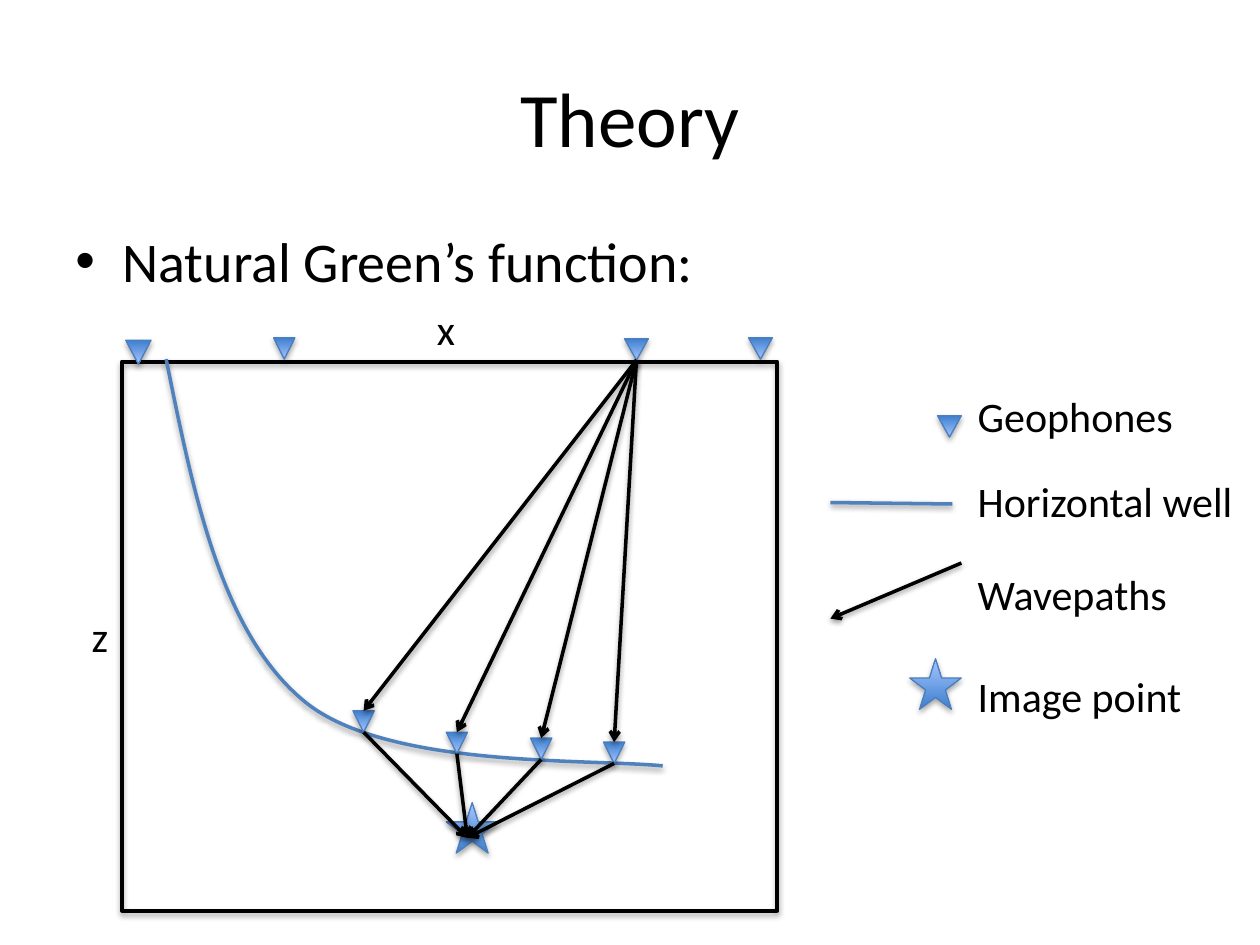
from lxml import etree
from pptx import Presentation
from pptx.dml.color import RGBColor
from pptx.enum.shapes import MSO_CONNECTOR, MSO_SHAPE
from pptx.enum.text import MSO_ANCHOR, MSO_AUTO_SIZE, PP_ALIGN
from pptx.oxml.ns import qn
from pptx.util import Cm, Pt

LINE = MSO_CONNECTOR.STRAIGHT
RECT, STAR = MSO_SHAPE.RECTANGLE, MSO_SHAPE.STAR_5_POINT
CONE = MSO_SHAPE.ISOSCELES_TRIANGLE
FIT, MIDDLE, CENTER = MSO_AUTO_SIZE.SHAPE_TO_FIT_TEXT, MSO_ANCHOR.MIDDLE, PP_ALIGN.CENTER
COLORS = {"ink": "000000", "well": "4F81BD", "edge": "4B7EBC",
          "deep": "3F80CE", "pale": "A4C4FF"}

# All places are in centimetres.
TITLE = ("Theory", (1.27, 0.76, 22.86, 3.18))
POINT = ("Natural Green’s function:", (1.27, 4.45, 22.86, 12.57))
FRAME = (2.46, 7.29, 13.21, 11.07)
LABELS = [  # text, left, top, width
    ("x", 8.56, 5.99, 0.89), ("z", 1.6, 12.19, 0.84),
    ("Geophones", 19.46, 7.75, 4.5), ("Horizontal well", 19.46, 9.47, 5.74),
    ("Wavepaths", 19.46, 11.33, 4.42), ("Image point", 19.46, 13.39, 4.67),
]
STARS = [(9.0, 16.18), (18.34, 13.28)]
SURFACE = [  # middle, top, width, height
    (15.33, 6.81, 0.48, 0.43), (12.83, 6.83, 0.48, 0.43),
    (5.73, 6.81, 0.43, 0.43), (2.79, 6.86, 0.51, 0.48),
]
KEY = (19.14, 8.38, 0.48, 0.43)
SIDE = 0.43
BURIED = [(7.33, 14.33), (9.21, 14.76), (10.91, 14.88), (12.38, 14.96)]
SOURCE, TARGET = (12.83, 7.26), (9.42, 16.89)
# Start, then two control points and an end for each cubic curve
WELL = [(3.35, 7.24), (3.91, 10.01), (4.47, 12.78), (6.15, 14.15),
        (7.8, 15.49), (11.81, 15.29), (13.36, 15.44)]
WELL_KEY = ((16.74, 10.13), (19.2, 10.16))
PATH_KEY = ((19.38, 11.35), (16.74, 12.47))


def rgb(name):
    return RGBColor.from_string(COLORS[name])


def shade(shape, alpha, dist):
    """Give the shape a soft shadow that falls straight down."""
    props = shape._element.spPr
    for old in props.findall(qn("a:effectLst")):
        props.remove(old)
    effects = etree.SubElement(props, qn("a:effectLst"))
    shadow = etree.SubElement(effects, qn("a:outerShdw"), blurRad="40000",
                              dist=str(dist), dir="5400000", rotWithShape="0")
    color = etree.SubElement(shadow, qn("a:srgbClr"), val=COLORS["ink"])
    etree.SubElement(color, qn("a:alpha"), val=str(alpha * 1000))


def stroke(shape, color, width):
    shape.line.color.rgb = rgb(color)
    shape.line.width = Pt(width)


def write(shape, text, size, **form):
    frame = shape.text_frame
    frame.text = text
    for name, value in form.items():
        setattr(frame, name, value)
    para = frame.paragraphs[0]
    font = para.runs[0].font
    for name, value in {"name": "Calibri", "size": Pt(size)}.items():
        setattr(font, name, value)
    font.color.rgb = rgb("ink")
    return para


def add_mark(shapes, kind, box, turn=0):
    mark = shapes.add_shape(kind, *map(Cm, box))
    mark.rotation = turn
    mark.fill.gradient()
    mark.fill.gradient_angle = 90
    for stop, name in zip(mark.fill.gradient_stops, ("deep", "pale")):
        stop.color.rgb = rgb(name)
    stroke(mark, "edge", 0.75)
    shade(mark, 35, 23000)


def add_phone(shapes, mid, top, width, height):
    add_mark(shapes, CONE, (mid - width / 2, top, width, height), 180)


def add_line(shapes, start, end, color="ink", head=True):
    line = shapes.add_connector(LINE, *map(Cm, start + end))
    stroke(line, color, 2)
    if head:
        etree.SubElement(line.line._get_or_add_ln(), qn("a:tailEnd"), type="arrow")
    shade(line, 38, 20000)


def add_curve(shapes, points):
    """Draw an open outline and turn each three segments into one cubic."""
    spots = [(Cm(x), Cm(y)) for x, y in points]
    pen = shapes.build_freeform(*spots[0])
    pen.add_line_segments(spots[1:], close=False)
    curve = pen.convert_to_shape()
    steps = list(curve._element.iter(qn("a:lnTo")))
    for i in range(0, len(steps), 3):
        cubic = etree.Element(qn("a:cubicBezTo"))
        steps[i].addprevious(cubic)
        for step in steps[i:i + 3]:
            cubic.append(step[0])
            step.getparent().remove(step)
    curve.fill.background()
    stroke(curve, "well", 2)
    shade(curve, 38, 20000)


def main():
    deck = Presentation()
    deck.slide_width, deck.slide_height = Cm(25.4), Cm(19.05)
    slide = deck.slides.add_slide(deck.slide_layouts[5])
    shapes = slide.shapes

    text, box = TITLE
    title = shapes.title
    for name, value in zip(("left", "top", "width", "height"), box):
        setattr(title, name, Cm(value))
    write(title, text, 44, vertical_anchor=MIDDLE).alignment = CENTER

    text, box = POINT
    para = write(shapes.add_textbox(*map(Cm, box)), text, 32, word_wrap=True)
    para.space_before = Pt(6.4)
    props = para._p.get_or_add_pPr()
    props.set("marL", str(Cm(0.95)))
    props.set("indent", str(Cm(-0.95)))
    etree.SubElement(props, qn("a:buFont"), typeface="Arial")
    etree.SubElement(props, qn("a:buChar"), char="•")

    for spot in STARS:
        add_mark(shapes, STAR, spot + (1.04, 1.02))
    frame = shapes.add_shape(RECT, *map(Cm, FRAME))
    frame.fill.background()
    stroke(frame, "ink", 2.25)
    shade(frame, 35, 23000)

    for text, left, top, width in LABELS:
        label = shapes.add_textbox(Cm(left), Cm(top), Cm(width), Cm(1.27))
        write(label, text, 24, word_wrap=False, auto_size=FIT)

    for phone in SURFACE + [KEY]:
        add_phone(shapes, *phone)
    add_curve(shapes, WELL)
    for mid, top in BURIED:
        add_phone(shapes, mid, top, SIDE, SIDE)
    for mid, top in BURIED:
        add_line(shapes, SOURCE, (mid, top))
        add_line(shapes, (mid, top + SIDE), TARGET)
    add_line(shapes, *WELL_KEY, color="well", head=False)
    add_line(shapes, *PATH_KEY)
    deck.save("out.pptx")


if __name__ == "__main__":
    main()
